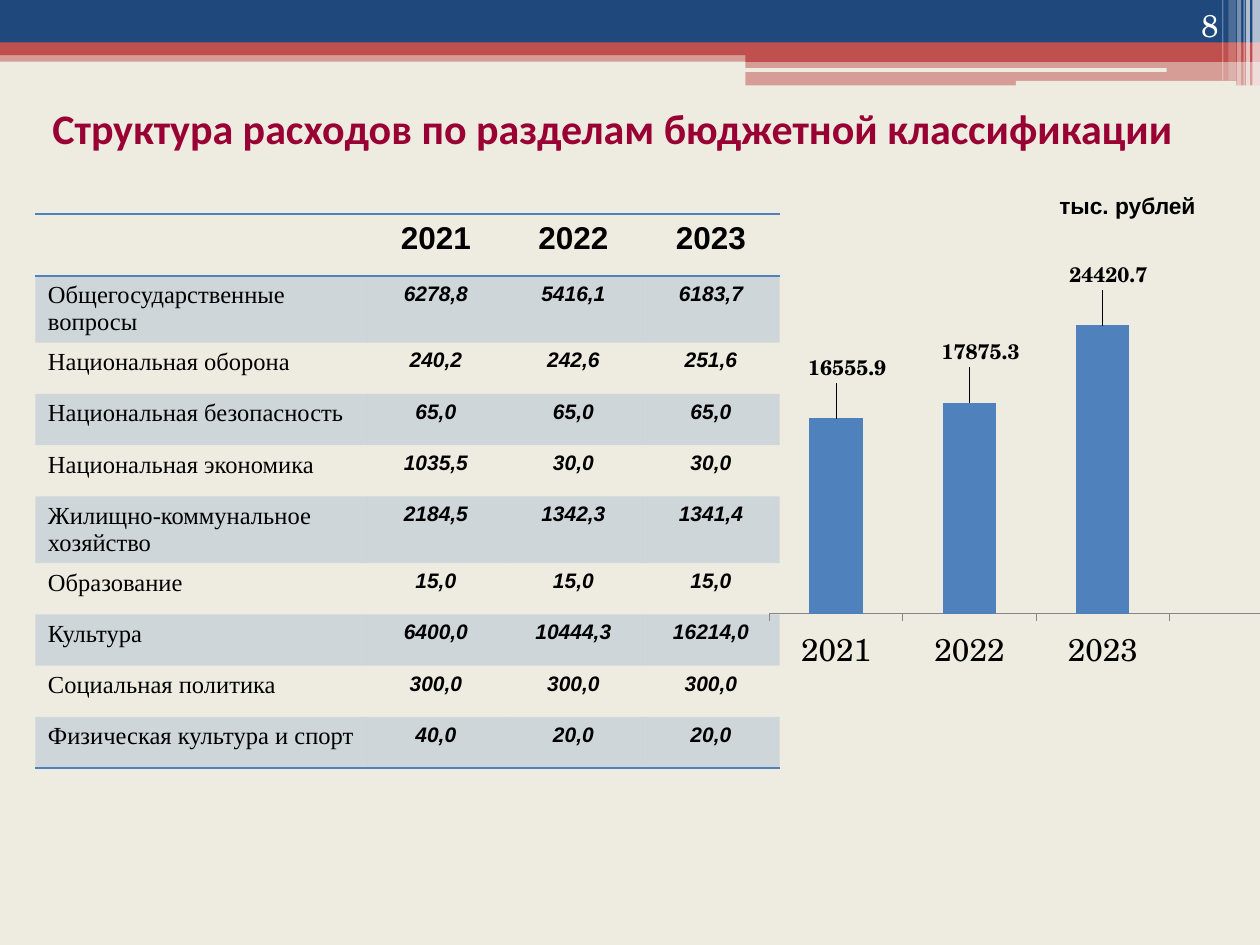
from pptx import Presentation
from pptx.chart.data import CategoryChartData
from pptx.dml.color import RGBColor
from pptx.enum.chart import XL_CHART_TYPE, XL_LABEL_POSITION, XL_TICK_MARK
from pptx.enum.shapes import MSO_SHAPE
from pptx.enum.text import MSO_ANCHOR, PP_ALIGN
from pptx.oxml import parse_xml
from pptx.oxml.ns import nsdecls, qn
from pptx.util import Pt

THEME = {
    "paper": "EEECE1", "navy": "1F497D", "red": "C0504D", "blue": "4F81BD",
    "white": "FFFFFF", "black": "000000", "wine": "990033", "gray": "868686",
    "title_size": 24, "head_size": 18, "name_size": 14, "unit_size": 13, "value_size": 12,
    "sans": "Arial", "serif": "Times New Roman", "title_font": "Calibri", "chart_font": "TeX Gyre Schola",
}

TITLE = "Структура расходов по разделам бюджетной классификации"
UNIT = "тыс. рублей"
PAGE = "8"
YEARS = ["2021", "2022", "2023"]
SECTIONS = [
    ("Общегосударственные вопросы", "6278,8", "5416,1", "6183,7"),
    ("Национальная оборона", "240,2", "242,6", "251,6"),
    ("Национальная безопасность", "65,0", "65,0", "65,0"),
    ("Национальная экономика", "1035,5", "30,0", "30,0"),
    ("Жилищно-коммунальное хозяйство", "2184,5", "1342,3", "1341,4"),
    ("Образование", "15,0", "15,0", "15,0"),
    ("Культура", "6400,0", "10444,3", "16214,0"),
    ("Социальная политика", "300,0", "300,0", "300,0"),
    ("Физическая культура и спорт", "40,0", "20,0", "20,0"),
]
TOTALS = [16555.9, 17875.3, 24420.7]
LABEL_SHIFTS = [(0.02, -0.07), (0.02, -0.07), (0.01, -0.07)]

BANNER = [
    (0, 28.8, 720, 6.5, "red", 50),
    (0, 0, 720, 24.5, "navy", 100),
    (0, 24.3, 720, 7.2, "red", 100),
    (426, 28.2, 294, 7.2, "red", 100),
    (426, 34.9, 294, 14, "red", 50),
]
BANNER_LINES = [(425.5, 38.9, 241.2, 2.2), (580.5, 46.2, 126, 2.8)]
STRIPES = [
    (715.7, 4.3, 49, 65), (712, 2.2, 49, 65), (710.6, 0.7, 49, 60),
    (707, 2.2, 49, 40), (702, 4.3, 46, 20), (698.4, 0.7, 46, 30),
]


def color(name):
    return RGBColor.from_string(THEME[name])


def set_alpha(fill_parent, percent):
    for srgb in fill_parent.findall(f"{qn('a:solidFill')}/{qn('a:srgbClr')}"):
        srgb.append(parse_xml(f'<a:alpha {nsdecls("a")} val="{percent * 1000}"/>'))


def add_block(slide, box, fill, opacity=100, kind=MSO_SHAPE.RECTANGLE):
    shape = slide.shapes.add_shape(kind, *map(Pt, box))
    shape.shadow.inherit = False
    shape.fill.solid()
    shape.fill.fore_color.rgb = color(fill)
    shape.line.fill.background()
    if opacity < 100:
        set_alpha(shape.element.spPr, opacity)


def write(frame, text, size, font, ink="black", bold=False, italic=False, align=PP_ALIGN.LEFT):
    paragraph = frame.paragraphs[0]
    paragraph.alignment = align
    run = paragraph.add_run()
    run.text = text
    run.font.size = Pt(THEME[size])
    run.font.name = THEME[font]
    run.font.color.rgb = color(ink)
    run.font.bold = bold
    run.font.italic = italic


def add_text(slide, box, text, anchor=MSO_ANCHOR.TOP, **style):
    frame = slide.shapes.add_textbox(*map(Pt, box)).text_frame
    frame.word_wrap = True
    frame.vertical_anchor = anchor
    write(frame, text, **style)


def add_border(cell, side):
    cell._tc.get_or_add_tcPr().append(parse_xml(
        f'<a:{side} {nsdecls("a")} w="12700"><a:solidFill>'
        f'<a:srgbClr val="{THEME["blue"]}"/></a:solidFill></a:{side}>'))


def add_sections_table(slide):
    rows = [("", *YEARS), *SECTIONS]
    graphic = slide.shapes.add_table(len(rows), 4, Pt(20.2), Pt(122.4), Pt(425.4), Pt(299))
    graphic.element.find(f".//{qn('a:tableStyleId')}").text = "{2D5ABB26-0587-4C30-8999-92F81FD0307C}"
    table = graphic.table
    for column, width in zip(table.columns, [189.6] + [78.6] * 3):
        column.width = Pt(width)
    for r, values in enumerate(rows):
        table.rows[r].height = Pt(29.3 if r else 35.2)
        for c, text in enumerate(values):
            cell = table.cell(r, c)
            if r == 0:
                add_border(cell, "lnT")
            if r in (0, len(rows) - 1):
                add_border(cell, "lnB")
            if r % 2:
                cell.fill.solid()
                cell.fill.fore_color.rgb = color("blue")
                set_alpha(cell._tc.tcPr, 20)
            else:
                cell.fill.background()
            if r == 0 and text:
                write(cell.text_frame, text, "head_size", "sans", bold=True, align=PP_ALIGN.CENTER)
            elif r and c == 0:
                write(cell.text_frame, text, "name_size", "serif")
            elif r:
                write(cell.text_frame, text, "value_size", "sans",
                      bold=True, italic=True, align=PP_ALIGN.CENTER)


def add_totals_chart(slide):
    data = CategoryChartData(number_format="0.0")
    data.categories = YEARS + [""]
    data.add_series("Series 1", TOTALS + [None])
    chart = slide.shapes.add_chart(XL_CHART_TYPE.COLUMN_CLUSTERED,
                                   Pt(433.4), Pt(143.3), Pt(317.5), Pt(245.5), data).chart
    chart.has_legend = False
    chart.has_title = False
    chart.font.name = THEME["chart_font"]
    chart.font.size = Pt(THEME["head_size"])
    chart.font.color.rgb = color("black")

    value_axis = chart.value_axis
    value_axis.minimum_scale, value_axis.maximum_scale = 0, 30000
    value_axis.has_major_gridlines = False
    value_axis.visible = False
    category_axis = chart.category_axis
    category_axis.major_tick_mark = XL_TICK_MARK.OUTSIDE
    category_axis.format.line.color.rgb = color("gray")

    plot = chart.plots[0]
    plot.gap_width = 150
    plot.vary_by_categories = False
    series = plot.series[0]
    series.format.fill.solid()
    series.format.fill.fore_color.rgb = color("blue")
    for i in range(len(TOTALS)):
        label = series.points[i].data_label
        label.font.size = Pt(THEME["value_size"])
        label.font.bold = True
        label.font.name = THEME["chart_font"]
        label.font.color.rgb = color("black")
        label.position = XL_LABEL_POSITION.OUTSIDE_END
    for element, (x, y) in zip(chart.element.iter(qn("c:dLbl")), LABEL_SHIFTS):
        element.insert(1, parse_xml(
            f'<c:layout {nsdecls("c")}><c:manualLayout><c:x val="{x}"/><c:y val="{y}"/>'
            '</c:manualLayout></c:layout>'))

    plot_area = chart.element.find(f".//{qn('c:plotArea')}")
    for layout in plot_area.findall(qn("c:layout")):
        plot_area.remove(layout)
    plot_area.insert(0, parse_xml(
        f'<c:layout {nsdecls("c")}><c:manualLayout><c:layoutTarget val="inner"/>'
        '<c:xMode val="edge"/><c:yMode val="edge"/><c:x val="0.02"/><c:y val="0.02"/>'
        '<c:w val="0.96"/><c:h val="0.825"/></c:manualLayout></c:layout>'))


def main():
    presentation = Presentation()
    presentation.slide_width, presentation.slide_height = Pt(720), Pt(540)
    slide = presentation.slides.add_slide(presentation.slide_layouts[5])
    slide.background.fill.solid()
    slide.background.fill.fore_color.rgb = color("paper")

    for *box, fill, opacity in BANNER:
        add_block(slide, box, fill, opacity)
    for box in BANNER_LINES:
        add_block(slide, box, "paper", kind=MSO_SHAPE.ROUNDED_RECTANGLE)
    for left, width, height, opacity in STRIPES:
        add_block(slide, (left, 0, width, height), "white", opacity)

    add_sections_table(slide)
    title = slide.shapes.title
    title.left, title.top, title.width, title.height = map(Pt, (0, 54.7, 700, 36.4))
    write(title.text_frame, TITLE, "title_size", "title_font", "wine", bold=True, align=PP_ALIGN.CENTER)
    add_text(slide, (643.7, 0, 59.8, 28.8), PAGE, MSO_ANCHOR.BOTTOM,
             size="head_size", font="chart_font", ink="white", align=PP_ALIGN.RIGHT)
    add_text(slide, (598.3, 105.8, 108, 23), UNIT, size="unit_size", font="sans", bold=True)
    add_totals_chart(slide)
    presentation.save("out.pptx")


if __name__ == "__main__":
    main()
